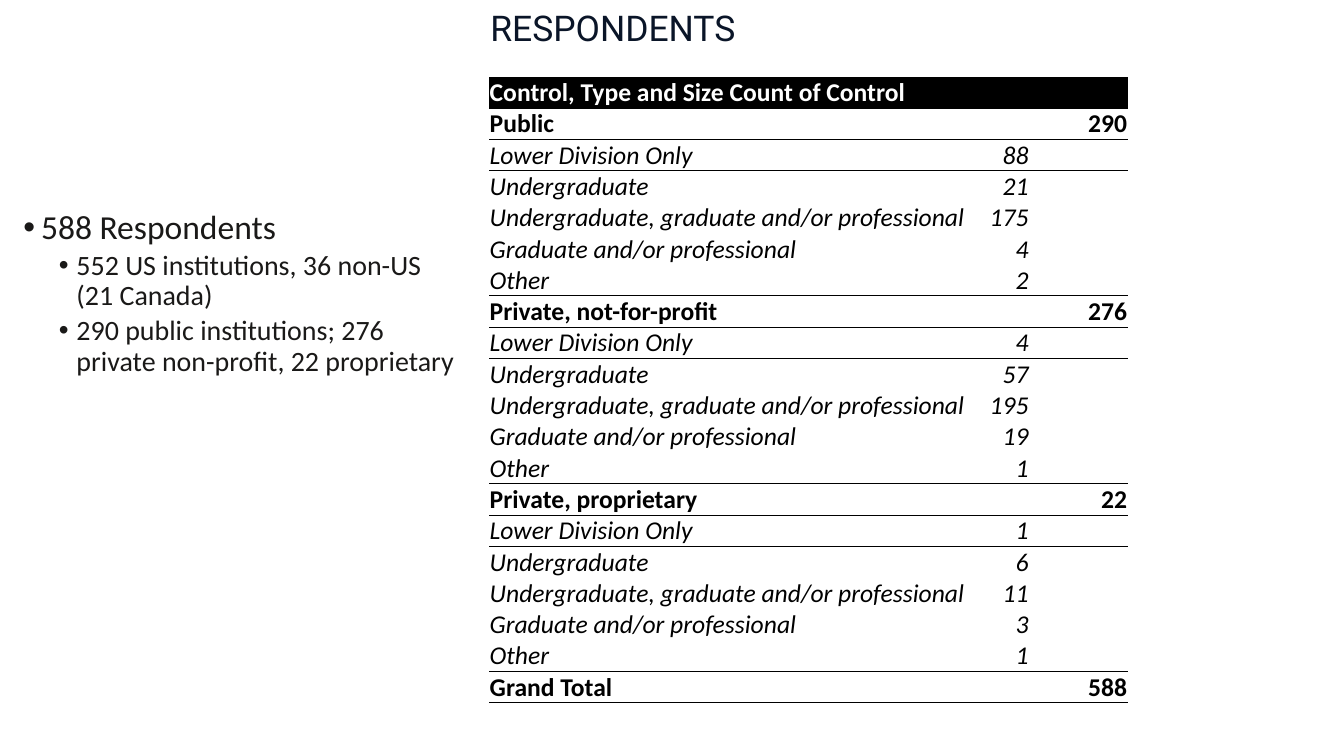
from dataclasses import dataclass

from pptx import Presentation
from pptx.dml.color import RGBColor
from pptx.enum.text import MSO_ANCHOR, PP_ALIGN
from pptx.oxml.ns import qn
from pptx.slide import Slide
from pptx.table import Table, _Cell
from pptx.text.text import TextFrame, _Paragraph
from pptx.util import Pt
from lxml import etree

BLACK = RGBColor(0x00, 0x00, 0x00)
WHITE = RGBColor(0xFF, 0xFF, 0xFF)
NAVY = RGBColor(0x0A, 0x15, 0x28)
CHARCOAL = RGBColor(0x1A, 0x19, 0x18)
LEFT = PP_ALIGN.LEFT
RIGHT = PP_ALIGN.RIGHT
BOTTOM = MSO_ANCHOR.BOTTOM
BODY_FONT = "Calibri"
TITLE_FONT = "Roboto"
PLAIN_TABLE_STYLE = "{2D5ABB26-0587-4C30-8999-92F81FD0307C}"
COLUMN_WIDTHS = (486.7, 61.9, 100.1)
ROW_HEIGHT = 31.64
INSTITUTION_TYPES = (
    "Lower Division Only",
    "Undergraduate",
    "Undergraduate, graduate and/or professional",
    "Graduate and/or professional",
    "Other",
)


@dataclass(frozen=True)
class Bullet:
    text: str
    size: float
    indent: float
    level: int
    space_before: float


@dataclass(frozen=True)
class Control:
    name: str
    total: int
    counts: tuple[int, ...]


@dataclass(frozen=True)
class Row:
    label: str
    count: str = ""
    total: str = ""
    header: bool = False
    detail: bool = False


BULLETS = (
    Bullet("588 Respondents", 34.1, 18, 0, 0),
    Bullet("552 US institutions, 36 non-US (21 Canada)", 28.4, 54, 1, 5),
    Bullet("290 public institutions; 276 private non-profit, 22 proprietary", 28.4, 54, 1, 5),
)
CONTROLS = (
    Control("Public", 290, (88, 21, 175, 4, 2)),
    Control("Private, not-for-profit", 276, (4, 57, 195, 19, 1)),
    Control("Private, proprietary", 22, (1, 6, 11, 3, 1)),
)


def add_run(paragraph: _Paragraph, text: str, font: str, size: float, color: RGBColor,
            bold: bool = False, italic: bool = False) -> None:
    run = paragraph.add_run()
    run.text = text
    run.font.name = font
    run.font.size = Pt(size)
    run.font.color.rgb = color
    run.font.bold = bold
    run.font.italic = italic


def add_text_frame(slide: Slide, left: float, top: float, width: float, height: float,
                   wrap: bool) -> TextFrame:
    frame = slide.shapes.add_textbox(Pt(left), Pt(top), Pt(width), Pt(height)).text_frame
    frame.word_wrap = wrap
    return frame


def add_bullet(paragraph: _Paragraph, bullet: Bullet) -> None:
    properties = paragraph._p.get_or_add_pPr()
    properties.set("marL", str(Pt(bullet.indent)))
    properties.set("indent", str(Pt(-18)))
    etree.SubElement(properties, qn("a:buFont"), typeface="Arial")
    etree.SubElement(properties, qn("a:buChar"), char="•")
    paragraph.level = bullet.level
    paragraph.line_spacing = 0.9
    paragraph.space_before = Pt(bullet.space_before)
    add_run(paragraph, bullet.text, BODY_FONT, bullet.size, CHARCOAL)


def add_summary(slide: Slide) -> None:
    frame = add_text_frame(slide, 16.6, 210.2, 459.4, 486.7, True)
    for index, bullet in enumerate(BULLETS):
        paragraph = frame.add_paragraph() if index else frame.paragraphs[0]
        add_bullet(paragraph, bullet)


def add_border(cell: _Cell, side: str) -> None:
    line = etree.SubElement(cell._tc.get_or_add_tcPr(), qn(f"a:{side}"), w=str(Pt(0.5)))
    fill = etree.SubElement(line, qn("a:solidFill"))
    etree.SubElement(fill, qn("a:srgbClr"), val=str(BLACK))


def build_rows() -> list[Row]:
    rows = [Row("Control, Type and Size Count of Control", header=True)]
    for control in CONTROLS:
        rows.append(Row(control.name, total=str(control.total)))
        rows += [Row(label, count=str(count), detail=True)
                 for label, count in zip(INSTITUTION_TYPES, control.counts)]
    grand_total = sum(control.total for control in CONTROLS)
    return rows + [Row("Grand Total", total=str(grand_total))]


def fill_cell(cell: _Cell, row: Row, text: str, alignment: PP_ALIGN,
              line_above: bool, line_below: bool) -> None:
    cell.margin_left = cell.margin_right = cell.margin_top = Pt(0.6)
    cell.margin_bottom = Pt(0)
    cell.vertical_anchor = BOTTOM
    if line_above:
        add_border(cell, "lnT")
    if line_below:
        add_border(cell, "lnB")
    if row.header:
        cell.fill.solid()
        cell.fill.fore_color.rgb = BLACK
    else:
        cell.fill.background()
    if text:
        paragraph = cell.text_frame.paragraphs[0]
        paragraph.alignment = alignment
        add_run(paragraph, text, BODY_FONT, 26, WHITE if row.header else BLACK,
                bold=not row.detail, italic=row.detail)


def fill_table(table: Table, rows: list[Row]) -> None:
    table.first_row = False
    table.horz_banding = False
    table._tbl.tblPr.find(qn("a:tableStyleId")).text = PLAIN_TABLE_STYLE
    for column, width in zip(table.columns, COLUMN_WIDTHS):
        column.width = Pt(width)
    for index, row in enumerate(rows):
        table.rows[index].height = Pt(ROW_HEIGHT)
        line_above = index > 0 and not (row.detail and rows[index - 1].detail)
        line_below = not row.detail or not rows[index + 1].detail
        texts = (row.label, row.count, row.total)
        for column, text in enumerate(texts):
            fill_cell(table.cell(index, column), row, text, RIGHT if column else LEFT,
                      line_above, line_below)


def main() -> None:
    presentation = Presentation()
    presentation.slide_width = Pt(1365.1)
    presentation.slide_height = Pt(768.2)
    slide = presentation.slides.add_slide(presentation.slide_layouts[6])
    add_summary(slide)
    rows = build_rows()
    frame = slide.shapes.add_table(len(rows), len(COLUMN_WIDTHS), Pt(496.8), Pt(77.8),
                                   Pt(sum(COLUMN_WIDTHS)), Pt(ROW_HEIGHT * len(rows)))
    fill_table(frame.table, rows)
    title = add_text_frame(slide, 491, 2.2, 270, 51.1, False)
    add_run(title.paragraphs[0], "RESPONDENTS", TITLE_FONT, 36, NAVY)
    presentation.save("out.pptx")


if __name__ == "__main__":
    main()
